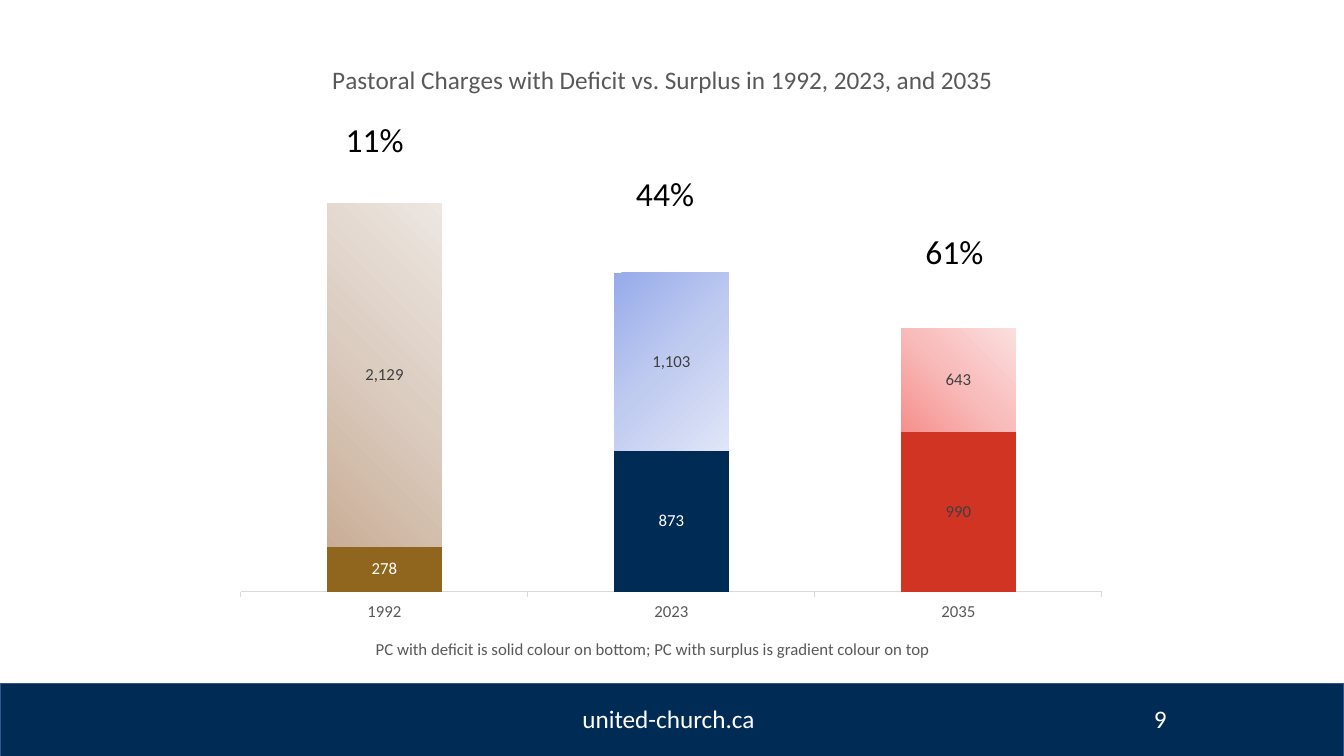
from pptx import Presentation
from pptx.chart.data import CategoryChartData
from pptx.dml.color import RGBColor
from pptx.enum.chart import XL_CHART_TYPE, XL_LABEL_POSITION, XL_TICK_MARK
from pptx.enum.shapes import MSO_SHAPE
from pptx.enum.text import PP_ALIGN
from pptx.oxml import parse_xml
from pptx.oxml.ns import nsdecls
from pptx.util import Inches, Pt

LEFT, CENTER, RIGHT = PP_ALIGN.LEFT, PP_ALIGN.CENTER, PP_ALIGN.RIGHT
FONT = "Calibri"
NAVY, GREY, LABEL, WHITE, BLACK = "002B55", "595959", "404040", "FFFFFF", "000000"

TITLE = "Pastoral Charges with Deficit vs. Surplus in 1992, 2023, and 2035"
YEARS = ["1992", "2023", "2035"]
DEFICIT = [278, 873, 990]
SURPLUS = [2129, 1103, 643]
DEFICIT_STYLES = [("90651E", WHITE), (NAVY, WHITE), ("D23424", LABEL)]  # fill, label
SURPLUS_GRADIENTS = [  # three colours, clockwise angle
    (["C9AE97", "DCCDC1", "EDE6E1"], 315),
    (["96ABEA", "C0CBF0", "E0E5F7"], 45),
    (["F6908D", "F8BCBB", "FBDFDE"], 315),
]
CHART_BOX = (2.22, 0.36, 8.89, 5.93)
PLOT_BOX = (2.39, 1.07, 8.54, 4.8)
TITLE_AT = (3.25, 0.57)
TEXTS = [  # text, box, size, colour, alignment
    ("united-church.ca", (4.42, 6.93, 4.42, 0.4), 18, WHITE, CENTER),
    ("9", (9.42, 6.93, 2.25, 0.4), 18, WHITE, RIGHT),
    ("PC with deficit is solid colour on bottom; PC with surplus is gradient colour on top",
     (2.03, 6.29, 8.89, 0.3), 12, GREY, CENTER),
    ("11%", (3.33, 1.13, 1.64, 0.5), 24, BLACK, LEFT),
    ("44%", (6.21, 1.67, 1.07, 0.5), 24, BLACK, LEFT),
    ("61%", (9.08, 2.24, 0.88, 0.5), 24, BLACK, LEFT),
]


def rgb(value):
    return RGBColor.from_string(value)


def style_font(font, size, color):
    font.name, font.size, font.bold = FONT, Pt(size), False
    font.color.rgb = rgb(color)


def add_text(slide, text, *, box, size, color, align):
    shape = slide.shapes.add_textbox(*map(Inches, box))
    shape.text_frame.word_wrap = True
    paragraph = shape.text_frame.paragraphs[0]
    paragraph.alignment = align
    run = paragraph.add_run()
    run.text = text
    style_font(run.font, size, color)


def fill_gradient(point, colors, angle):
    stops = "".join(
        f'<a:gs pos="{index * 50000}"><a:srgbClr val="{color}"/></a:gs>'
        for index, color in enumerate(colors))
    properties = point.format._element.get_or_add_spPr()
    properties.append(parse_xml(
        f'<a:gradFill {nsdecls("a")} rotWithShape="1"><a:gsLst>{stops}</a:gsLst>'
        f'<a:lin ang="{angle * 60000}" scaled="0"/></a:gradFill>'))


def set_layout(parent, position, size=(), inner=False):
    """Place a chart part, given in slide inches, as fractions of the chart."""
    left, top, width, height = CHART_BOX
    values = {"x": (position[0] - left) / width, "y": (position[1] - top) / height}
    if size:
        values.update(w=size[0] / width, h=size[1] / height)
    target = '<c:layoutTarget val="inner"/>' if inner else ""
    modes = '<c:xMode val="edge"/><c:yMode val="edge"/>'
    numbers = "".join(f'<c:{key} val="{value:.4f}"/>' for key, value in values.items())
    layout = parse_xml(f'<c:layout {nsdecls("c")}><c:manualLayout>{target}{modes}{numbers}'
                       '</c:manualLayout></c:layout>')
    for old in parent.xpath("c:layout"):
        parent.remove(old)
    texts = parent.xpath("c:tx")
    parent.insert(1 if texts else 0, layout)


def add_chart(slide):
    data = CategoryChartData()
    data.categories = YEARS
    data.add_series("Series 1", DEFICIT)
    data.add_series("Series 2", SURPLUS)
    chart = slide.shapes.add_chart(
        XL_CHART_TYPE.COLUMN_STACKED, *map(Inches, CHART_BOX), data).chart
    style_font(chart.font, 10, BLACK)
    chart.has_legend = False
    chart.has_title = True
    title = chart.chart_title
    run = title.text_frame.paragraphs[0].add_run()
    run.text = TITLE
    style_font(run.font, 18, GREY)
    set_layout(title._element, TITLE_AT)

    category_axis = chart.category_axis
    style_font(category_axis.tick_labels.font, 12, GREY)
    category_axis.major_tick_mark = XL_TICK_MARK.OUTSIDE
    category_axis.format.line.color.rgb = rgb("D9D9D9")
    category_axis.format.line.width = Pt(0.75)
    value_axis = chart.value_axis
    value_axis.visible = False
    value_axis.has_major_gridlines = False
    value_axis.minimum_scale, value_axis.maximum_scale = 0, 3000

    plot = chart.plots[0]
    plot.gap_width, plot.overlap, plot.vary_by_categories = 150, 100, False
    deficit, surplus = plot.series
    for series, color in ((deficit, "4472C4"), (surplus, "ED7D31")):
        series.format.fill.solid()
        series.format.fill.fore_color.rgb = rgb(color)
        labels = series.data_labels
        labels.show_value = True
        labels.position = XL_LABEL_POSITION.CENTER
        labels.number_format, labels.number_format_is_linked = "#,##0", False
        style_font(labels.font, 12, LABEL)
    for index, (color, label_color) in enumerate(DEFICIT_STYLES):
        point = deficit.points[index]
        point.format.fill.solid()
        point.format.fill.fore_color.rgb = rgb(color)
        if label_color != LABEL:
            style_font(point.data_label.font, 12, label_color)
            point.data_label.position = XL_LABEL_POSITION.CENTER
    for index, (colors, angle) in enumerate(SURPLUS_GRADIENTS):
        fill_gradient(surplus.points[index], colors, angle)
    plot_area = chart._chartSpace.xpath("c:chart/c:plotArea")[0]
    set_layout(plot_area, PLOT_BOX[:2], PLOT_BOX[2:], inner=True)


def main():
    presentation = Presentation()
    presentation.slide_width, presentation.slide_height = Inches(13.33), Inches(7.5)
    slide = presentation.slides.add_slide(presentation.slide_layouts[6])
    footer = slide.shapes.add_shape(
        MSO_SHAPE.RECTANGLE, 0, Inches(6.78), Inches(13.33), Inches(0.75))
    footer.shadow.inherit = False
    footer.fill.solid()
    footer.fill.fore_color.rgb = rgb(NAVY)
    footer.line.color.rgb = rgb("325491")
    footer.line.width = Pt(1)
    add_chart(slide)
    for text, box, size, color, align in TEXTS:
        add_text(slide, text, box=box, size=size, color=color, align=align)
    presentation.save("out.pptx")


if __name__ == "__main__":
    main()
